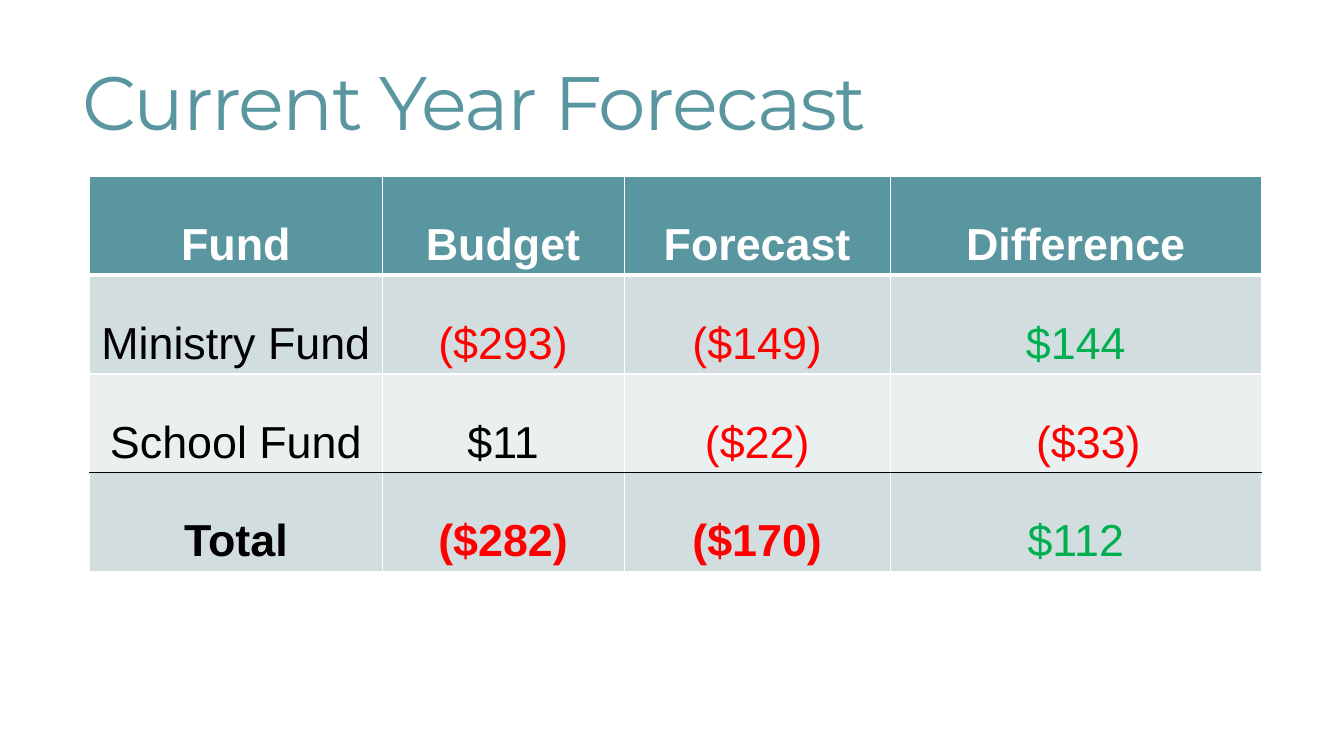
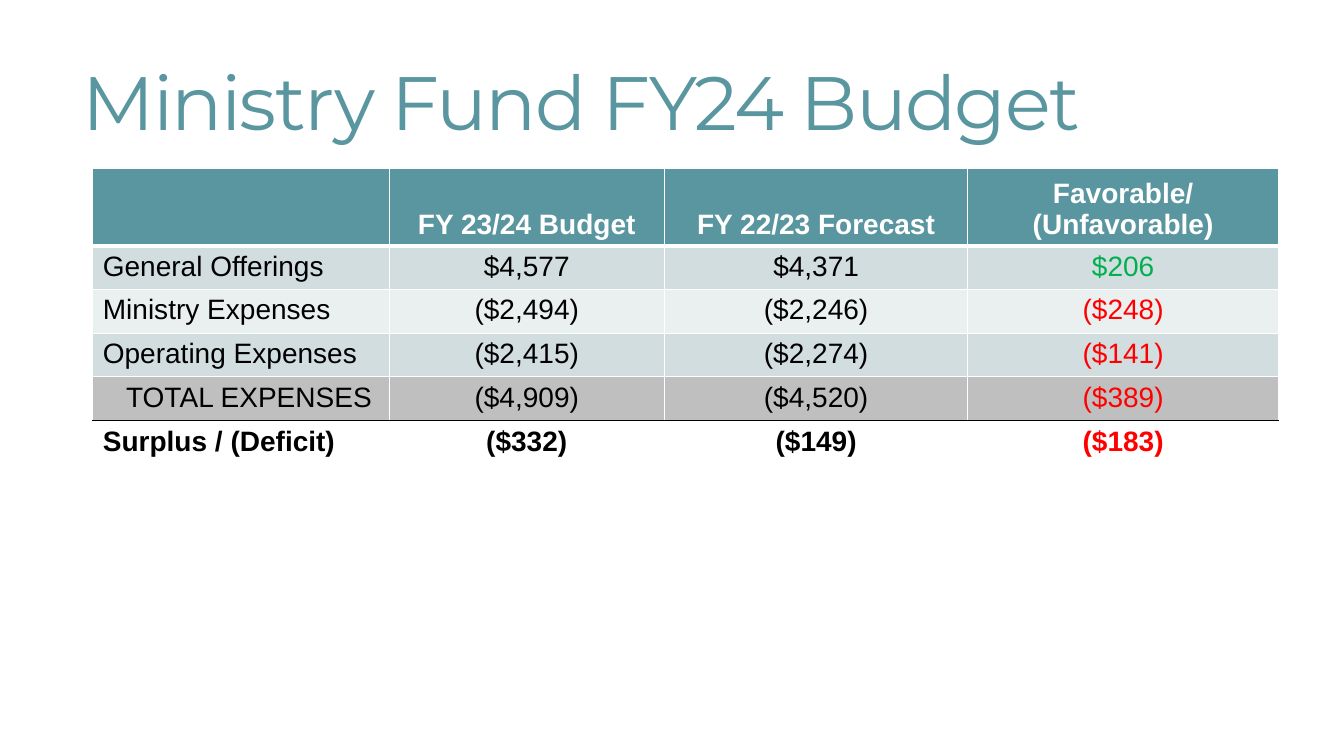
from lxml import etree
from pptx import Presentation
from pptx.dml.color import RGBColor
from pptx.enum import text
from pptx.oxml import ns
from pptx.util import Inches, Pt

TEAL, WHITE, BLACK = "5A96A0", "FFFFFF", "000000"
RED, GREEN = "FF0000", "00B050"
DARK_BAND, LIGHT_BAND, GRAY_BAND = "D2DDDF", "EAEFF0", "BFBFBF"
TITLE_FONT, TABLE_FONT = "Montserrat", "Arial"

SLIDES = [
    {
        "title": "Current Year Forecast",
        "left": 0.89, "top": 1.75, "size": 32,
        "widths": [2.9, 2.4, 2.64, 3.68],
        "heights": [0.98] * 4,
        "rows": [
            ["Fund", "Budget", "Forecast", "Difference"],
            ["Ministry Fund", "($293)", "($149)", "$144"],
            ["School Fund", "$11", "($22)", "($33)"],
            ["Total", "($282)", "($170)", "$112"],
        ],
        "fills": [TEAL, DARK_BAND, LIGHT_BAND, DARK_BAND],
        "label_align": text.PP_ALIGN.CENTER,
        "body_anchor": text.MSO_ANCHOR.BOTTOM,
        "first_toned_column": 1,
        "bold_total_columns": 3,
        "indents": {(2, 3): 0.25},
    },
    {
        "title": "Ministry Fund FY24 Budget",
        "left": 0.92, "top": 1.67, "size": 20,
        "widths": [2.94, 2.73, 3.01, 3.08],
        "heights": [0.71] + [0.41] * 5,
        "rows": [
            ["", "FY 23/24 Budget", "FY 22/23 Forecast", "Favorable/ (Unfavorable)"],
            ["General Offerings", "$4,577", "$4,371", "$206"],
            ["Ministry Expenses", "($2,494)", "($2,246)", "($248)"],
            ["Operating Expenses", "($2,415)", "($2,274)", "($141)"],
            ["TOTAL EXPENSES", "($4,909)", "($4,520)", "($389)"],
            ["Surplus / (Deficit)", "($332)", "($149)", "($183)"],
        ],
        "fills": [TEAL, DARK_BAND, LIGHT_BAND, DARK_BAND, GRAY_BAND, None],
        "label_align": text.PP_ALIGN.LEFT,
        "body_anchor": text.MSO_ANCHOR.TOP,
        "first_toned_column": 3,
        "bold_total_columns": 4,
        "indents": {(4, 0): 0.23},
    },
]


def rgb(color):
    return RGBColor.from_string(color)


def add_run(paragraph, wording, font, size, color, bold=False):
    run = paragraph.add_run()
    run.text = wording
    run.font.name = font
    run.font.size = Pt(size)
    run.font.bold = bold
    run.font.color.rgb = rgb(color)
    return run


def add_title(slide, wording):
    box = slide.shapes.add_textbox(Inches(0.72), Inches(0.55), Inches(11.78), Inches(1.04))
    frame = box.text_frame
    frame.word_wrap = True
    frame.vertical_anchor = text.MSO_ANCHOR.MIDDLE
    paragraph = frame.paragraphs[0]
    paragraph.line_spacing = 0.85
    run = add_run(paragraph, wording, TITLE_FONT, 54, TEAL)
    run.font._element.set("spc", "-120")


def set_border(cell, side, color, width):
    properties = cell._tc.get_or_add_tcPr()
    line = etree.SubElement(properties, ns.qn(f"a:ln{side}"), w=str(Pt(width)))
    fill = etree.SubElement(line, ns.qn("a:solidFill"))
    etree.SubElement(fill, ns.qn("a:srgbClr"), val=color)


def set_borders(cell, row, last):
    header_line, total_line = (WHITE, 3), (BLACK, 1)
    rules = {1: header_line, last: total_line}
    plain = (WHITE, 1)
    for side, style in (("L", plain), ("R", plain),
                        ("T", rules.get(row, plain)), ("B", rules.get(row + 1, plain))):
        set_border(cell, side, *style)


def text_color(content, row, column):
    if row == 0:
        return WHITE
    if column < content["first_toned_column"]:
        return BLACK
    if content["rows"][row][column].startswith("("):
        return RED
    return GREEN if column == len(content["widths"]) - 1 else BLACK


def fill_cell(cell, content, row, column):
    last = len(content["rows"]) - 1
    set_borders(cell, row, last)
    color = content["fills"][row]
    if color:
        cell.fill.solid()
        cell.fill.fore_color.rgb = rgb(color)
    else:
        cell.fill.background()
    cell.vertical_anchor = text.MSO_ANCHOR.BOTTOM if row == 0 else content["body_anchor"]
    cell.margin_left = Inches(0.1 + content["indents"].get((row, column), 0))
    paragraph = cell.text_frame.paragraphs[0]
    is_label = row > 0 and column == 0
    paragraph.alignment = content["label_align"] if is_label else text.PP_ALIGN.CENTER
    wording = content["rows"][row][column]
    if wording:
        bold = row == 0 or (row == last and column < content["bold_total_columns"])
        add_run(paragraph, wording, TABLE_FONT, content["size"],
                text_color(content, row, column), bold)


def add_fund_table(slide, content):
    widths, heights = content["widths"], content["heights"]
    table = slide.shapes.add_table(
        len(heights), len(widths), Inches(content["left"]), Inches(content["top"]),
        Inches(sum(widths)), Inches(sum(heights))).table
    table.horz_banding = False
    for column, width in zip(table.columns, widths):
        column.width = Inches(width)
    for row, height in zip(table.rows, heights):
        row.height = Inches(height)
    for row in range(len(heights)):
        for column in range(len(widths)):
            fill_cell(table.cell(row, column), content, row, column)


def main():
    presentation = Presentation()
    presentation.slide_width = Inches(13.33)
    presentation.slide_height = Inches(7.5)
    for content in SLIDES:
        slide = presentation.slides.add_slide(presentation.slide_layouts[6])
        add_title(slide, content["title"])
        add_fund_table(slide, content)
    presentation.save("out.pptx")


if __name__ == "__main__":
    main()
